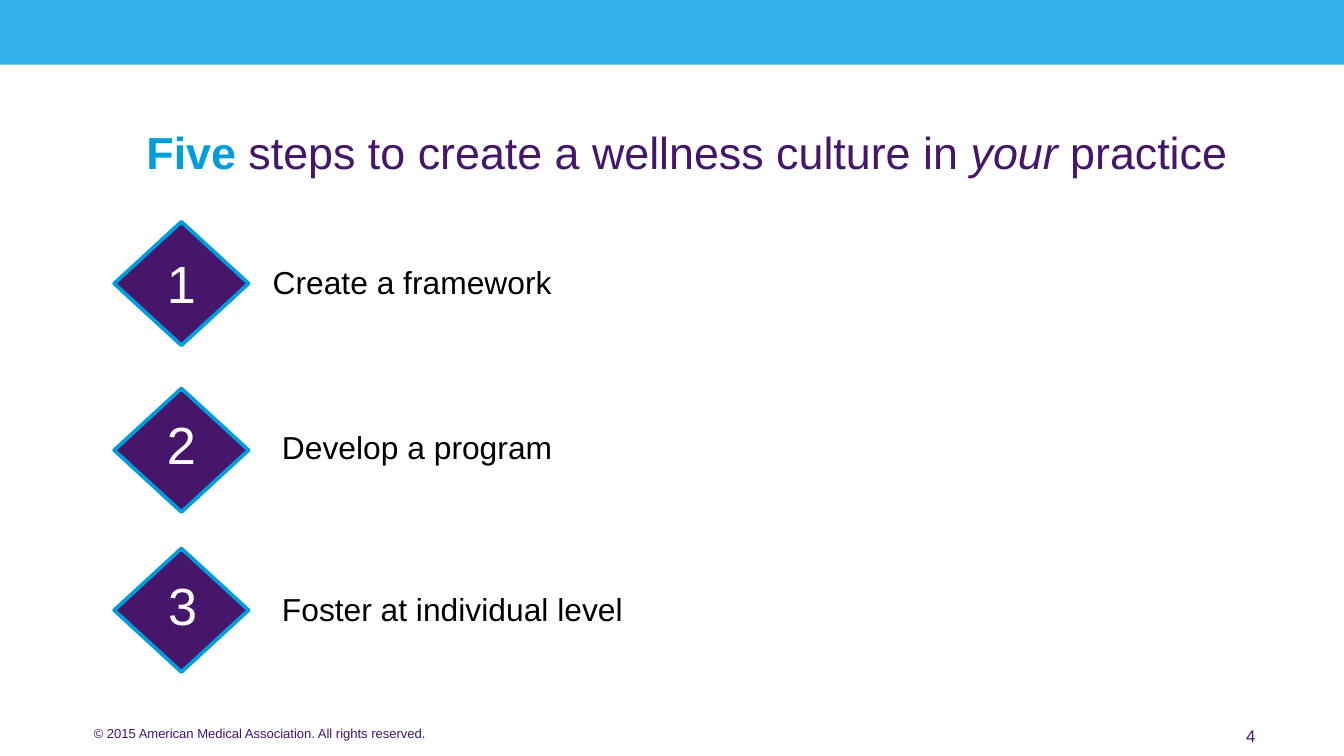
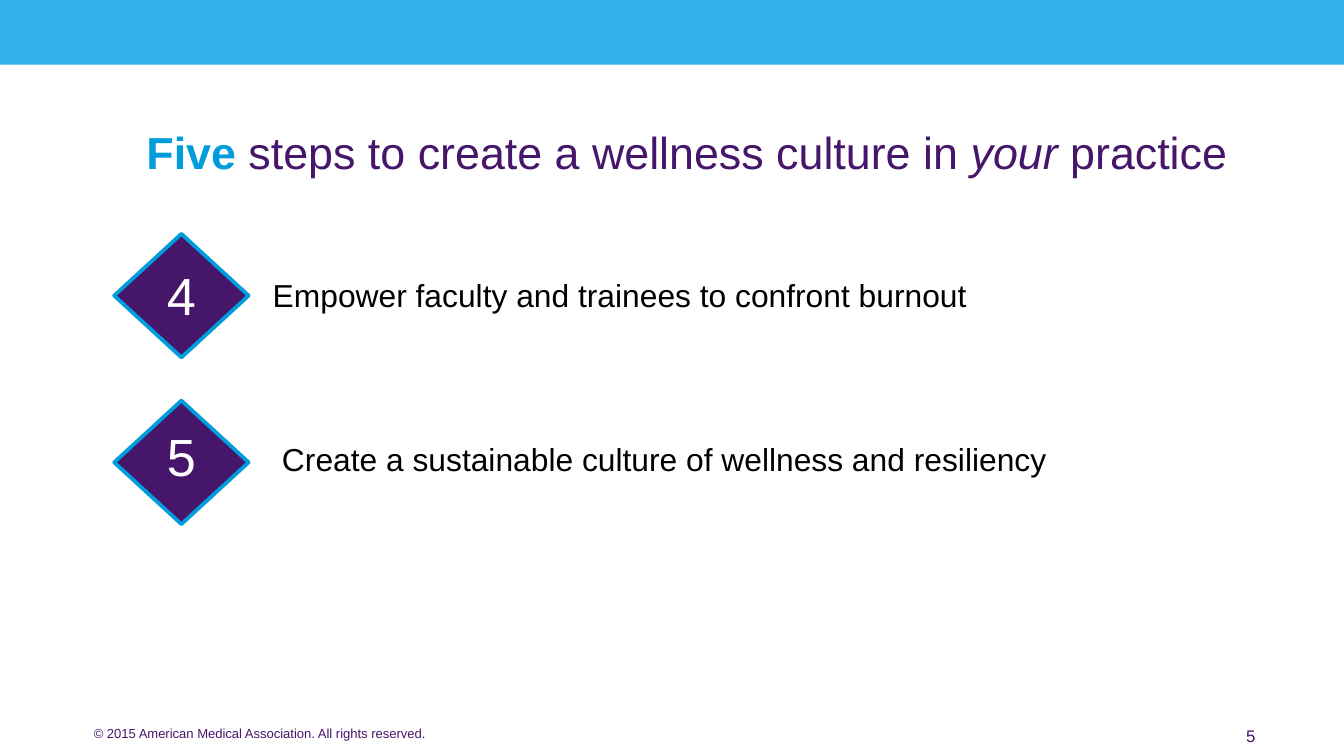
"""Builds two slides on the five steps to a wellness culture."""
from pptx import Presentation
from pptx.dml.color import RGBColor
from pptx.enum.shapes import MSO_SHAPE
from pptx.enum.text import MSO_ANCHOR, MSO_AUTO_SIZE, PP_ALIGN
from pptx.util import Pt

PURPLE, BLUE, BAND = "46166B", "009DDC", "33B1EB"
WHITE, BLACK = "FFFFFF", "000000"
FONT = "Arial"
SLIDE_WIDTH, SLIDE_HEIGHT = 720, 405

ROWS = [
    {"diamond": 118.8, "number": (79.2, 131), "label": (139, 137.5, 494.6, 28)},
    {"diamond": 208.1, "number": (79.2, 217.4), "label": (144, 225.4, 470.2, 31)},
    {"diamond": 293.8, "number": (79.9, 303.8), "label": (144, 312.5, 470.2, 28)},
]
PAGES = [
    (4, 1, 0, ["Create a framework", "Develop a program", "Foster at individual level"]),
    (5, 4, 6.5, ["Empower faculty and trainees to confront burnout",
                 "Create a sustainable culture of wellness and resiliency"]),
]


def color(value):
    return RGBColor.from_string(value)


class StepDeck:
    def __init__(self):
        self.deck = Presentation()
        self.deck.slide_width = Pt(SLIDE_WIDTH)
        self.deck.slide_height = Pt(SLIDE_HEIGHT)
        self.page = None

    def add_page(self, number):
        self.page = self.deck.slides.add_slide(self.deck.slide_layouts[5])
        self.shape(MSO_SHAPE.RECTANGLE, 0, 0, SLIDE_WIDTH, 34.6, BAND)
        self.text("© 2015 American Medical Association. All rights reserved.",
                  43.2, 385.2, 269.3, 19.8, 7, PURPLE)
        self.text(str(number), 511.9, 385.2, 167.8, 19.8, 9, PURPLE, PP_ALIGN.RIGHT)
        self.title()

    def span(self, para, words, size, ink, bold=False, italic=False):
        span = para.add_run()
        span.text = words
        span.font.name = FONT
        span.font.size = Pt(size)
        span.font.color.rgb = color(ink)
        span.font.bold = bold
        span.font.italic = italic

    def title(self):
        title = self.page.shapes.title
        title.left, title.top, title.width, title.height = map(Pt, (40.3, 47.5, 655.2, 67.7))
        frame = title.text_frame
        frame.auto_size = MSO_AUTO_SIZE.NONE
        frame.vertical_anchor = MSO_ANCHOR.MIDDLE
        para = frame.paragraphs[0]
        para.alignment = PP_ALIGN.CENTER
        self.span(para, "Five ", 24, BLUE, bold=True)
        self.span(para, "steps to create a wellness culture in ", 24, PURPLE)
        self.span(para, "your", 24, PURPLE, italic=True)
        self.span(para, " practice", 24, PURPLE)

    def shape(self, kind, left, top, width, height, fill, line=None):
        shape = self.page.shapes.add_shape(kind, Pt(left), Pt(top), Pt(width), Pt(height))
        shape.shadow.inherit = False
        shape.fill.solid()
        shape.fill.fore_color.rgb = color(fill)
        if line:
            shape.line.color.rgb = color(line)
            shape.line.width = Pt(2)
        else:
            shape.line.fill.background()

    def text(self, words, left, top, width, height, size, ink, align=PP_ALIGN.LEFT):
        box = self.page.shapes.add_textbox(Pt(left), Pt(top), Pt(width), Pt(height))
        box.text_frame.word_wrap = True
        para = box.text_frame.paragraphs[0]
        para.alignment = align
        self.span(para, words, size, ink)

    def step(self, number, label, row, shift):
        self.shape(MSO_SHAPE.DIAMOND, 61.2, row["diamond"] + shift, 72, 66.2, PURPLE, BLUE)
        left, top = row["number"]
        self.text(str(number), left, top + shift, 36, 41, 28, WHITE, PP_ALIGN.CENTER)
        left, top, width, height = row["label"]
        self.text(label, left, top + shift, width, height, 17, BLACK)


def main():
    steps = StepDeck()
    for page_number, first, shift, labels in PAGES:
        steps.add_page(page_number)
        for number, (label, row) in enumerate(zip(labels, ROWS), first):
            steps.step(number, label, row, shift)
    steps.deck.save("out.pptx")


if __name__ == "__main__":
    main()
